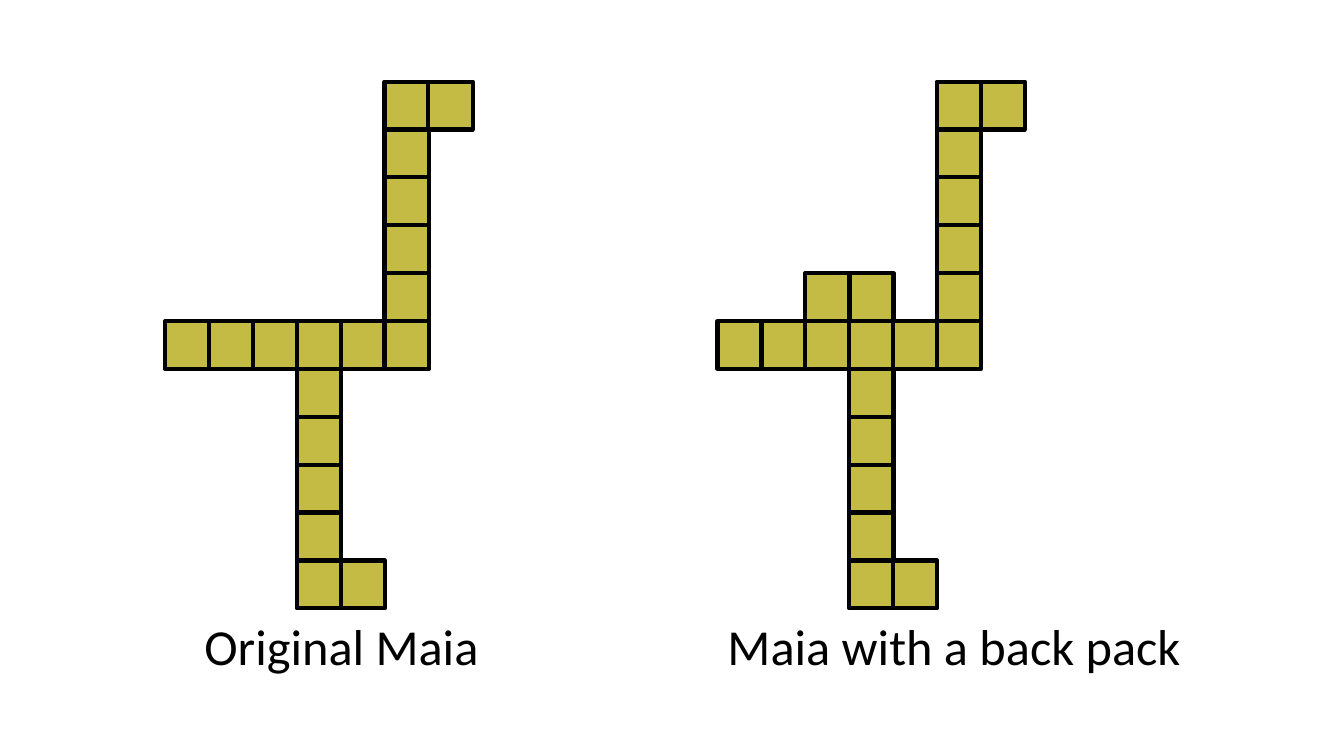
import pptx
import pptx.util
import pptx.dml.color
import pptx.enum.shapes
import pptx.enum.text

PX = 4572  # EMU per px, 200 px to the inch
OLIVE = pptx.dml.color.RGBColor(0xC4, 0xBB, 0x44)
BLACK = pptx.dml.color.RGBColor(0x00, 0x00, 0x00)

# Square grid, shared by both figures
STEP_X, STEP_Y = 87, 95
SQUARE_W, SQUARE_H = 88, 95
TOP = 162

# Squares of the figure as (column, row)
BODY = [(column, 5) for column in range(6)]
NECK = [(5, row) for row in range(4, -1, -1)]
LEG = [(3, row) for row in range(6, 11)]
HEAD, FOOT = [(6, 0)], [(4, 10)]
MAIA = BODY + NECK + LEG + HEAD + FOOT
BACK_PACK = [(3, 4), (2, 4)]


class Drawing:
    font = "Calibri"
    caption_size = pptx.util.Pt(36)
    outline = pptx.util.Pt(3)

    def __init__(self, slide):
        self.slide = slide

    def square(self, figure, left, top):
        square = figure.shapes.add_shape(
            pptx.enum.shapes.MSO_SHAPE.RECTANGLE,
            left * PX, top * PX, SQUARE_W * PX, SQUARE_H * PX)
        square.shadow.inherit = False
        square.fill.solid()
        square.fill.fore_color.rgb = OLIVE
        square.line.color.rgb = BLACK
        square.line.width = self.outline

    def caption(self, figure, text, left, top, width, height):
        caption = figure.shapes.add_textbox(
            left * PX, top * PX, width * PX, height * PX)
        frame = caption.text_frame
        frame.word_wrap = True
        frame.auto_size = pptx.enum.text.MSO_AUTO_SIZE.SHAPE_TO_FIT_TEXT
        frame.text = text
        font = frame.paragraphs[0].font
        font.name = self.font
        font.size = self.caption_size
        font.color.rgb = BLACK

    def figure(self, squares, left, text, text_left, text_width):
        figure = self.slide.shapes.add_group_shape()
        for column, row in squares:
            self.square(figure, left + column * STEP_X, TOP + row * STEP_Y)
        self.caption(figure, text, text_left, 1210, text_width, 142)


def main():
    deck = pptx.Presentation()
    deck.slide_width = 2667 * PX
    deck.slide_height = 1500 * PX
    drawing = Drawing(deck.slides.add_slide(deck.slide_layouts[6]))

    # Right figure, carrying the back pack
    drawing.figure(MAIA + BACK_PACK, 1424, "Maia with a back pack", 1424, 966)

    # Left figure
    drawing.figure(MAIA, 328, "Original Maia", 386, 676)

    deck.save("out.pptx")


if __name__ == "__main__":
    main()
